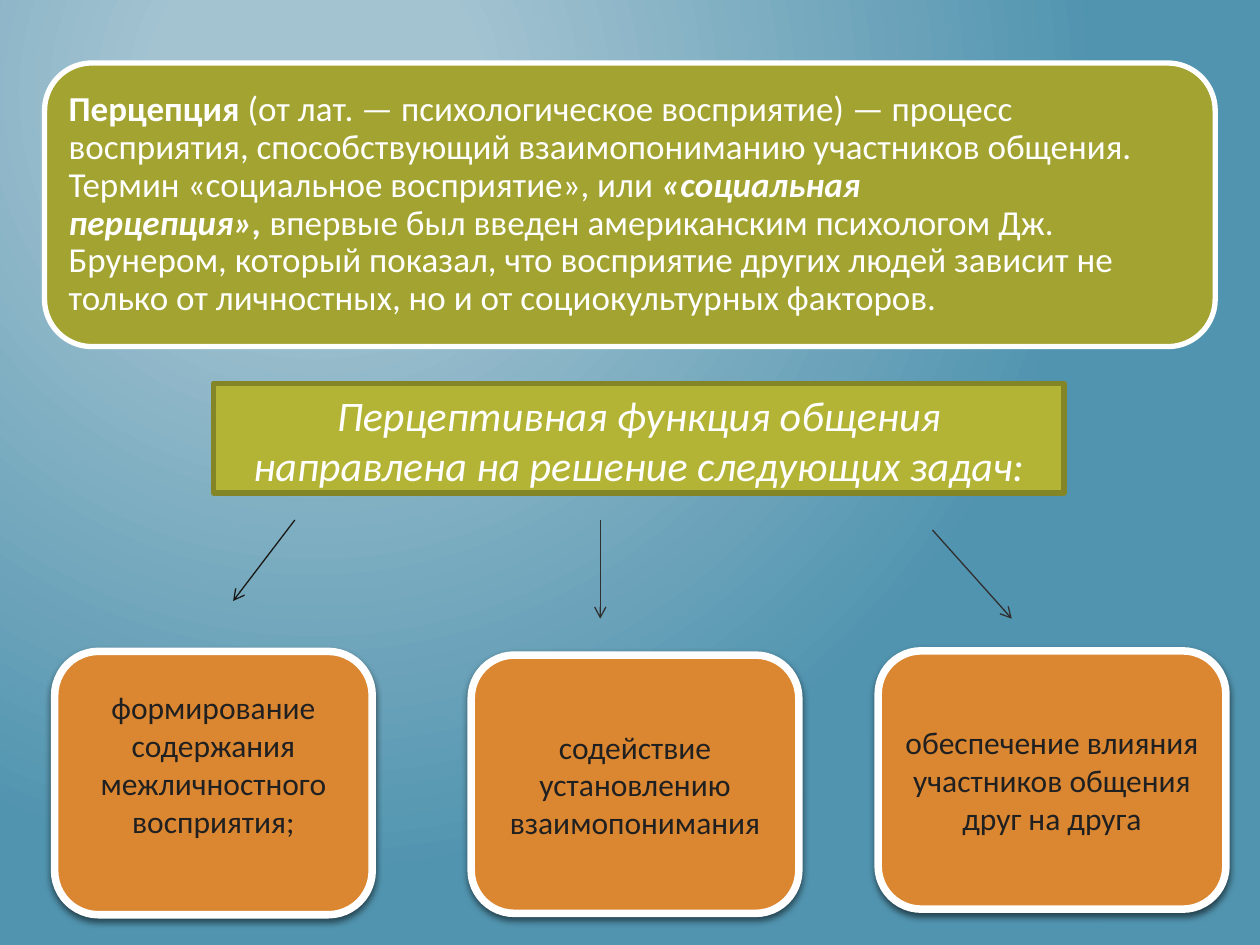
from dataclasses import dataclass
from typing import NamedTuple

from lxml.etree import SubElement as Sub
from pptx import Presentation
from pptx.dml.color import RGBColor as Rgb
from pptx.enum.shapes import MSO_CONNECTOR as Link, MSO_SHAPE as Kind
from pptx.enum.text import MSO_ANCHOR as Anchor, PP_ALIGN as Align
from pptx.oxml.ns import qn
from pptx.util import Inches, Pt


@dataclass(frozen=True)
class Theme:
    font: str = "Calibri"
    light: str = "A3C3D1"
    deep: str = "5194AF"
    olive: str = "A2A330"
    lime: str = "B3B435"
    moss: str = "848527"
    orange: str = "DB8631"
    white: str = "FFFFFF"
    ink: str = "202020"
    dark: str = "2F2F2F"
    head: int = 24
    body: int = 20
    small: int = 18


class Box(NamedTuple):
    x: float
    y: float
    w: float
    h: float


class Card(NamedTuple):
    box: Box
    text: str
    foot: float = 0.05


class Arrow(NamedTuple):
    x1: float
    y1: float
    x2: float
    y2: float
    color: str


class Span(NamedTuple):
    text: str
    bold: bool = False
    italic: bool = False


T = Theme()
WIDE, HIGH = Inches(10), Inches(7.5)
HARD = chr(160)

PANEL = Box(3.54, 6.67, 92.9, 30)
NOTE = Box(4.65, 8.13, 90.7, 27.07)
TITLE = Box(16.94, 40.57, 67.5, 11.6)
SPANS = [
    Span(f"Перцепция{HARD}", bold=True),
    Span("(от лат."),
    Span(f"{HARD}—{HARD}", italic=True),
    Span("психологическое восприятие) — процесс восприятия, способствующий "
         "взаимопониманию участников общения. \n"
         f"Термин «социальное восприятие», или{HARD}"),
    Span(f"«социальная перцепция»,{HARD}", bold=True, italic=True),
    Span("впервые был введен американским психологом Дж. Брунером, который "
         "показал, что восприятие других людей зависит не только от личностных, "
         "но и от социокультурных факторов."),
]
CARDS = [
    Card(Box(4.34, 68.93, 25.2, 27.87),
         "формирование содержания межличностного восприятия;", foot=0.35),
    Card(Box(37.4, 69.33, 26, 27.33), "содействие установлению взаимопонимания"),
    Card(Box(69.7, 68.88, 27.6, 27.33),
         "обеспечение влияния участников общения друг на друга"),
]
ARROWS = [
    Arrow(23.4, 55.03, 18.5, 63.6, "191814"),
    Arrow(47.64, 55.03, 47.64, 65.47, T.dark),
    Arrow(74, 56.08, 80.3, 65.47, T.dark),
]


def across(share: float) -> int:
    return round(WIDE * share / 100)


def down(share: float) -> int:
    return round(HIGH * share / 100)


def place(box: Box) -> tuple[int, int, int, int]:
    return across(box.x), down(box.y), across(box.w), down(box.h)


def write(shape, spans: list[Span], *, size: int, color: str = T.white,
          align=Align.CENTER, anchor=Anchor.MIDDLE, inset: float | None = None,
          foot: float | None = None, line: float | None = None,
          before: float = 0) -> None:
    frame = shape.text_frame
    frame.word_wrap = True
    frame.vertical_anchor = anchor
    if inset is not None:
        frame.margin_left = frame.margin_right = Inches(inset)
        frame.margin_top = frame.margin_bottom = Inches(inset)
    if foot is not None:
        frame.margin_bottom = Inches(foot)
    para = frame.paragraphs[0]
    para.alignment = align
    para.line_spacing = line
    para.space_before = Pt(before)
    for span in spans:
        for i, part in enumerate(span.text.split("\n")):
            if i:
                para.add_line_break()
            run = para.add_run()
            run.text = part
            font = run.font
            font.name, font.size = T.font, Pt(size)
            font.bold, font.italic = span.bold, span.italic
            font.color.rgb = Rgb.from_string(color)


def block(slide, kind, box: Box, fill: str, edge: str, width: float):
    shape = slide.shapes.add_shape(kind, *place(box))
    shape.shadow.inherit = False
    shape.fill.solid()
    shape.fill.fore_color.rgb = Rgb.from_string(fill)
    shape.line.color.rgb = Rgb.from_string(edge)
    shape.line.width = Pt(width)
    return shape


def shade(shape) -> None:
    fx = shape.element.spPr.find(qn("a:effectLst"))
    drop = Sub(fx, qn("a:outerShdw"), blurRad=str(Pt(4)), dist=str(Pt(2)),
               dir="5400000", rotWithShape="0")
    tone = Sub(drop, qn("a:srgbClr"), val="000000")
    Sub(tone, qn("a:alpha"), val="55000")


def draw_card(slide, card: Card) -> None:
    shape = block(slide, Kind.ROUNDED_RECTANGLE, card.box, T.orange, T.white, 4.32)
    shade(shape)
    write(shape, [Span(card.text)], size=T.small, color=T.ink, foot=card.foot)


def draw_arrow(slide, arrow: Arrow) -> None:
    link = slide.shapes.add_connector(
        Link.STRAIGHT, across(arrow.x1), down(arrow.y1),
        across(arrow.x2), down(arrow.y2))
    link.line.color.rgb = Rgb.from_string(arrow.color)
    link.line.width = Pt(0.75)
    Sub(link.element.spPr.find(qn("a:ln")), qn("a:tailEnd"), type="arrow")
    Sub(link.element.spPr, qn("a:effectLst"))


def paint(slide) -> None:
    fill = slide.background.fill
    fill.gradient()
    for stop, pos, color in zip(fill.gradient_stops, (0.2, 1), (T.light, T.deep)):
        stop.position = pos
        stop.color.rgb = Rgb.from_string(color)
    grad = slide.element.find(".//" + qn("a:gradFill"))
    grad.remove(grad.find(qn("a:lin")))
    ring = Sub(grad, qn("a:path"), path="circle")
    grad.find(qn("a:gsLst")).addnext(ring)
    Sub(ring, qn("a:fillToRect"), l="50000", t="20000", r="100000", b="100000")


def main() -> None:
    deck = Presentation()
    deck.slide_width, deck.slide_height = WIDE, HIGH
    slide = deck.slides.add_slide(deck.slide_layouts[6])
    paint(slide)
    block(slide, Kind.ROUNDED_RECTANGLE, PANEL, T.olive, T.white, 3.03)
    note = slide.shapes.add_textbox(*place(NOTE))
    write(note, SPANS, size=T.body, align=Align.LEFT, inset=0.08, line=0.9)
    title = block(slide, Kind.RECTANGLE, TITLE, T.lime, T.moss, 3.03)
    write(title, [Span(f"Перцептивная функция{HARD}общения направлена на решение "
                       "следующих задач:", italic=True)],
          size=T.head, anchor=Anchor.TOP, before=4.8)
    for arrow in ARROWS:
        draw_arrow(slide, arrow)
    for card in CARDS:
        draw_card(slide, card)
    deck.save("out.pptx")


if __name__ == "__main__":
    main()
